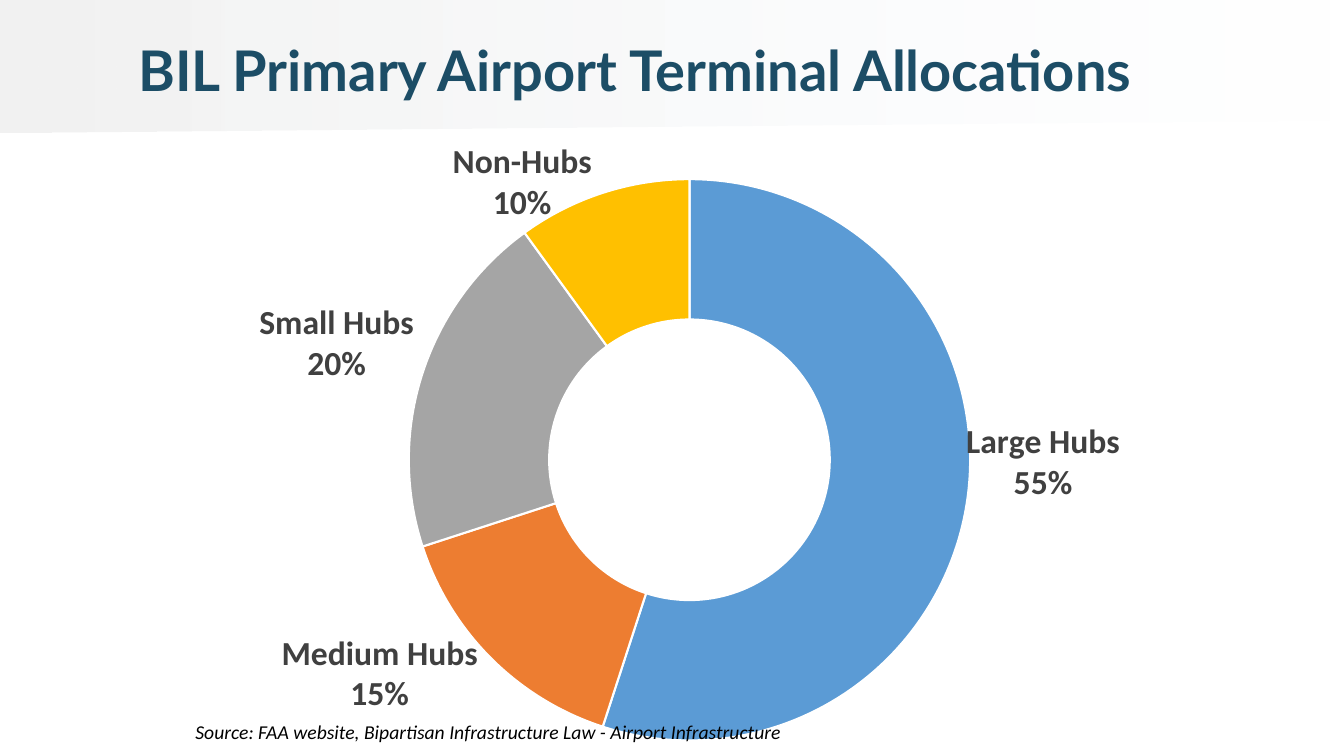
from lxml.etree import SubElement
from pptx import Presentation
from pptx.chart.data import CategoryChartData
from pptx.dml.color import RGBColor
from pptx.enum.chart import XL_CHART_TYPE
from pptx.enum.text import MSO_ANCHOR, PP_ALIGN
from pptx.oxml import parse_xml
from pptx.oxml.ns import nsdecls, qn
from pptx.util import Pt

TITLE = "BIL Primary Airport Terminal Allocations"
SOURCE = "Source: FAA website, Bipartisan Infrastructure Law - Airport Infrastructure"
# hub type, percent, colour, label shift from the ring in points
HUBS = [
    ("Large Hubs", 55, "5B9BD5", (104, -21)),
    ("Medium Hubs", 15, "ED7D31", (-115, 47)),
    ("Small Hubs", 20, "A5A5A5", (-109, -36)),
    ("Non-Hubs", 10, "FFC000", (-73, -55)),
]
BAND = [(0, 0), (949.5, 0), (949.5, 85.5), (0, 95)]
TITLE_BOX = (91.5, 29, 804, 47)
CHART_BOX = (91.5, 101, 804, 439)
RING_LEFT, RING_TOP, RING_SIZE = 292, 128, 401
SOURCE_BOX = (132.5, 511, 441, 24.5)

TITLE_FONT = {"name": "Lato", "size": Pt(40), "bold": True}
LABEL_FONT = {"name": "Calibri", "size": Pt(24), "bold": True}
SOURCE_FONT = {"name": "Calibri", "size": Pt(14), "italic": True}


def rgb(value):
    return RGBColor.from_string(value)


def format_font(font, values, color):
    for name, value in values.items():
        setattr(font, name, value)
    font.color.rgb = rgb(color)


def add_band(slide):
    """Draw the fading band behind the title."""
    builder = slide.shapes.build_freeform(0, 0, scale=Pt(1))
    builder.add_line_segments(BAND[1:], close=True)
    band = builder.convert_to_shape()
    band.shadow.inherit = False
    band.line.fill.background()
    band.fill.gradient()
    band.fill.gradient_angle = 0
    for stop, color in zip(band.fill.gradient_stops, ("F2F2F2", "F7FAFD")):
        stop.color.rgb = rgb(color)
    last_color = band.element.findall(".//" + qn("a:srgbClr"))[-1]
    SubElement(last_color, qn("a:alpha"), val="4000")
    slide.shapes.element.insert(2, band.element)


def manual_layout(x, y, size=None):
    """Return a chart layout whose lengths are fractions of the chart."""
    if size:
        target = '<c:layoutTarget val="inner"/><c:xMode val="edge"/><c:yMode val="edge"/>'
        extent = f'<c:w val="{size[0]:.4f}"/><c:h val="{size[1]:.4f}"/>'
    else:
        target = extent = ""
    return parse_xml(
        f'<c:layout {nsdecls("c")}><c:manualLayout>{target}'
        f'<c:x val="{x:.4f}"/><c:y val="{y:.4f}"/>{extent}'
        "</c:manualLayout></c:layout>"
    )


def add_hub_chart(slide):
    left, top, width, height = CHART_BOX
    data = CategoryChartData()
    data.categories = [hub[0] for hub in HUBS]
    data.add_series("Series 1", [hub[1] for hub in HUBS])
    chart = slide.shapes.add_chart(
        XL_CHART_TYPE.DOUGHNUT, *map(Pt, CHART_BOX), data
    ).chart
    chart.has_legend = False
    chart.has_title = False
    format_font(chart.font, {"name": "Calibri", "size": Pt(10)}, "000000")

    plot_area = chart.element.find(".//" + qn("c:plotArea"))
    for layout in plot_area.findall(qn("c:layout")):
        plot_area.remove(layout)
    plot_area.insert(0, manual_layout(
        (RING_LEFT - left) / width, (RING_TOP - top) / height,
        (RING_SIZE / width, RING_SIZE / height)))

    series = chart.plots[0].series[0]
    for index, (_, _, color, _) in enumerate(HUBS):
        point = series.points[index]
        point.format.fill.solid()
        point.format.fill.fore_color.rgb = rgb(color)
        point.format.line.width = Pt(1.5)
        point.format.line.color.rgb = rgb("FFFFFF")
        format_font(point.data_label.font, LABEL_FONT, "404040")

    labels = chart.element.findall(".//" + qn("c:dLbl"))
    shown = {"c:showVal": "0", "c:showCatName": "1", "c:showPercent": "1"}
    for label, (_, _, _, (shift_x, shift_y)) in zip(labels, HUBS):
        for tag, value in shown.items():
            label.find(qn(tag)).set("val", value)
        label.insert(1, manual_layout(shift_x / width, shift_y / height))
        separator = parse_xml(f'<c:separator {nsdecls("c")}>\n</c:separator>')
        label.find(qn("c:showBubbleSize")).addnext(separator)
    for leader in chart.element.iter(qn("c:showLeaderLines")):
        leader.set("val", "0")


def main():
    presentation = Presentation()
    presentation.slide_width, presentation.slide_height = Pt(960), Pt(540)
    slide = presentation.slides.add_slide(presentation.slide_layouts[5])

    title = slide.shapes.title
    title.left, title.top, title.width, title.height = map(Pt, TITLE_BOX)
    title.text_frame.text = TITLE
    title.text_frame.vertical_anchor = MSO_ANCHOR.MIDDLE
    paragraph = title.text_frame.paragraphs[0]
    paragraph.alignment = PP_ALIGN.LEFT
    paragraph.line_spacing = 0.9
    format_font(paragraph.font, TITLE_FONT, "1C4D66")

    add_band(slide)
    add_hub_chart(slide)

    source = slide.shapes.add_textbox(*map(Pt, SOURCE_BOX)).text_frame
    source.text = SOURCE
    source.word_wrap = False
    format_font(source.paragraphs[0].font, SOURCE_FONT, "000000")
    presentation.save("out.pptx")


if __name__ == "__main__":
    main()
